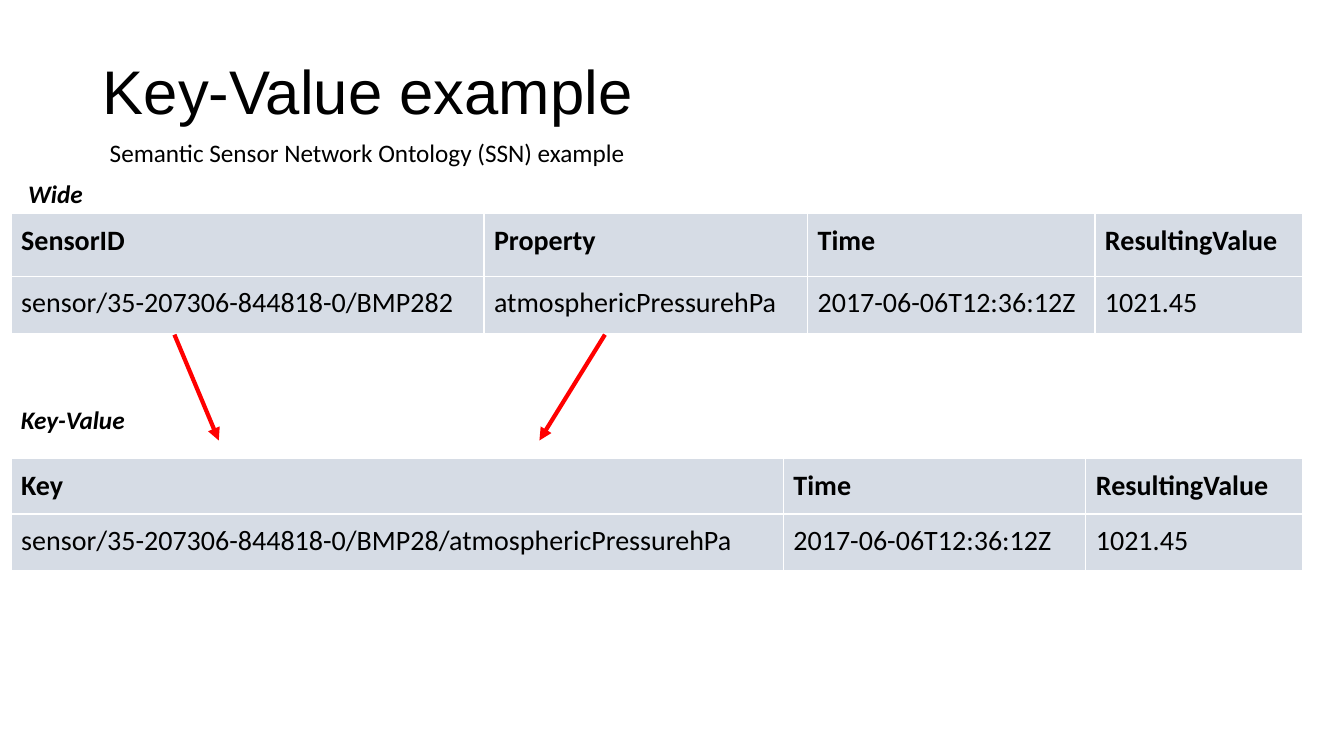
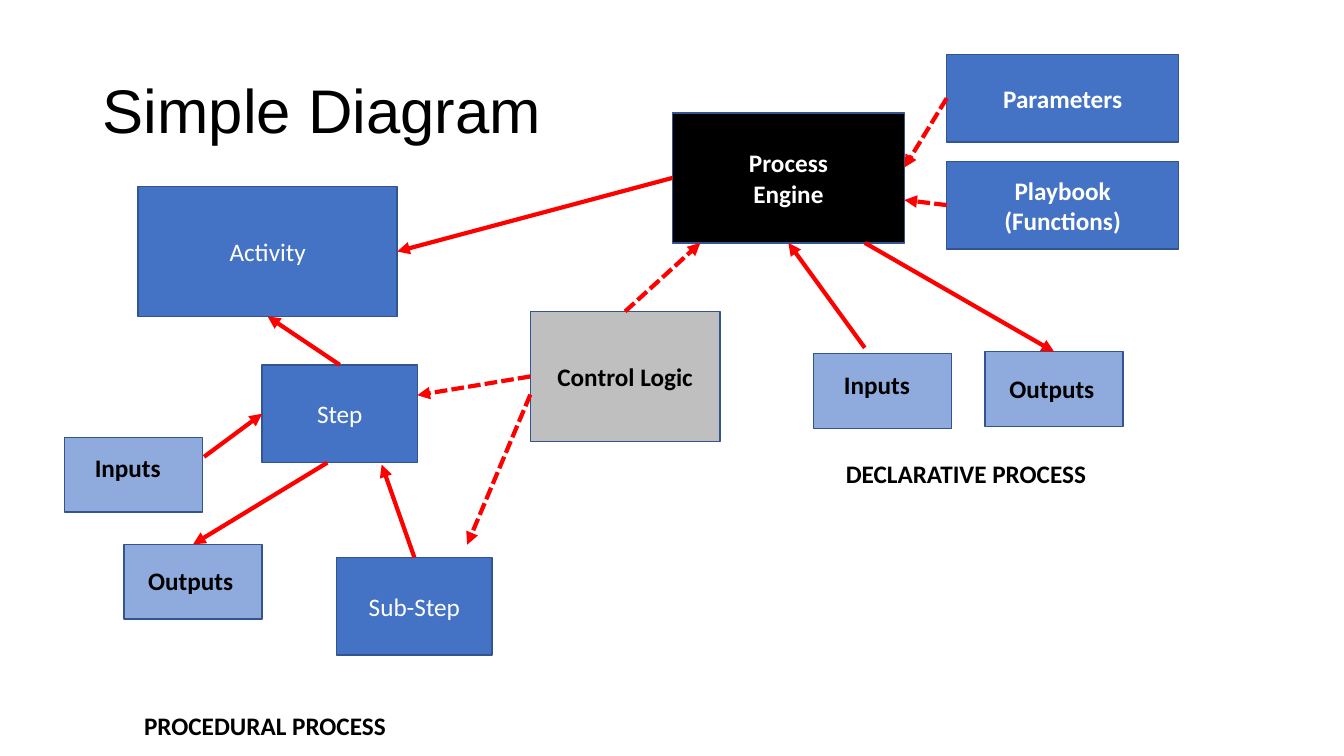
from lxml import etree
from pptx import Presentation
from pptx.dml.color import RGBColor
from pptx.enum.dml import MSO_LINE
from pptx.enum.shapes import MSO_CONNECTOR, MSO_SHAPE
from pptx.enum.text import MSO_ANCHOR, MSO_AUTO_SIZE, PP_ALIGN
from pptx.oxml.ns import qn
from pptx.util import Inches, Pt

RECT, STRAIGHT, DASH = MSO_SHAPE.RECTANGLE, MSO_CONNECTOR.STRAIGHT, MSO_LINE.SQUARE_DOT
TOP, MIDDLE = MSO_ANCHOR.TOP, MSO_ANCHOR.MIDDLE
LEFT, CENTER = PP_ALIGN.LEFT, PP_ALIGN.CENTER

# Shared style
BLACK = RGBColor(0x00, 0x00, 0x00)
WHITE = RGBColor(0xFF, 0xFF, 0xFF)
RED = RGBColor(0xFF, 0x00, 0x00)
BLUE = RGBColor(0x44, 0x72, 0xC4)
LIGHT_BLUE = RGBColor(0x8F, 0xAA, 0xDC)
OUTLINE = RGBColor(0x32, 0x54, 0x91)
GREY = RGBColor(0xBF, 0xBF, 0xBF)
CELL_FILL = RGBColor(0xD6, 0xDC, 0xE5)
TITLE_FONT, BODY_FONT = "Arial", "Calibri"
TITLE_LEFT, TITLE_TOP, TITLE_WIDTH = 0.92, 0.4, 11.5
LABEL_HEIGHT = 0.4
TITLE_ONLY = 5

# Slide 1: tables as (top, column widths, row heights, rows)
TABLE_LEFT = 0.11
TABLES = [
    (2.12, (4.69, 3.21, 2.85, 2.06), (0.62, 0.57), [
        ("SensorID", "Property", "Time", "ResultingValue"),
        ("sensor/35-207306-844818-0/BMP282", "atmosphericPressurehPa",
         "2017-06-06T12:36:12Z", "1021.45")]),
    (4.55, (7.66, 3, 2.15), (0.55, 0.56), [
        ("Key", "Time", "ResultingValue"),
        ("sensor/35-207306-844818-0/BMP28/atmosphericPressurehPa",
         "2017-06-06T12:36:12Z", "1021.45")]),
]
# Labels as (text, left, top, width, bold, italic)
TABLE_LABELS = [
    ("Wide", 0.18, 1.72, 0.75, True, True),
    ("Key-Value", 0.11, 3.96, 1.24, True, True),
    ("Semantic Sensor Network Ontology (SSN) example", 0.99, 1.31, 5.37, False, False),
]
KEY_ARROWS = [((1.73, 3.32), (2.17, 4.37)), ((6, 3.32), (5.35, 4.37))]

# Slide 2: box kinds as (width, height, fill, text colour, bold, text inset or None to centre)
KINDS = {
    "activity": (2.57, 1.29, BLUE, WHITE, False, None),
    "step": (1.54, 0.97, BLUE, WHITE, False, None),
    "logic": (1.88, 1.29, GREY, BLACK, True, None),
    "engine": (2.3, 1.29, BLACK, WHITE, True, None),
    "setting": (2.3, 0.87, BLUE, WHITE, True, None),
    "input": (1.37, 0.74, LIGHT_BLUE, BLACK, True, (0.3, 0.15)),
    "output": (1.37, 0.74, LIGHT_BLUE, BLACK, True, (0.24, 0.21)),
}
# Boxes as name: (kind, left, top, lines)
BOXES = {
    "activity": ("activity", 1.37, 1.85, ["Activity"]),
    "step": ("step", 2.6, 3.62, ["Step"]),
    "substep": ("step", 3.34, 5.53, ["Sub-Step"]),
    "logic": ("logic", 5.26, 3.09, ["Control Logic"]),
    "step in": ("input", 0.64, 4.34, ["Inputs"]),
    "step out": ("output", 1.23, 5.4, ["Outputs"]),
    "engine": ("engine", 6.67, 1.12, ["Process", "Engine"]),
    "parameters": ("setting", 9.39, 0.54, ["Parameters"]),
    "playbook": ("setting", 9.39, 1.6, ["Playbook", "(Functions)"]),
    "engine in": ("input", 8.07, 3.51, ["Inputs"]),
    "engine out": ("output", 9.77, 3.49, ["Outputs"]),
}
PROCESS_LABELS = [
    ("PROCEDURAL PROCESS", 1.33, 7, 2.62, True, False),
    ("DECLARATIVE PROCESS", 8.29, 4.5, 2.61, True, False),
]
# Arrow ends as shares of the box's width and height; these four are connection sites
N, W, S, E = (0.5, 0), (0, 0.5), (0.5, 1), (1, 0.5)
SITES = [N, W, S, E]
FLOWS = [  # from box, share, to box, share, dashed
    ("step", N, "activity", S, False),
    ("substep", N, "step", (0.77, 1.02), False),
    ("logic", W, "step", (1, 0.31), True),
    ("logic", (0, 0.64), "substep", (0.84, -0.13), True),
    ("step in", (1.01, 0.26), "step", W, False),
    ("step", (0.42, 1), "step out", N, False),
    ("engine", W, "activity", E, False),
    ("engine in", (0.37, -0.08), "engine", S, False),
    ("parameters", W, "engine", (1, 0.42), True),
    ("playbook", W, "engine", (1, 0.67), True),
    ("engine", (0.83, 1), "engine out", N, False),
    ("logic", N, "engine", (0.12, 1), True),
]


def add_run(p, text, size, color, bold=False, italic=False, font=BODY_FONT):
    r = p.add_run()
    r.text = text
    r.font.name, r.font.size = font, Pt(size)
    r.font.bold, r.font.italic = bold, italic
    r.font.color.rgb = color


def add_titled_slide(prs, title, height):
    slide = prs.slides.add_slide(prs.slide_layouts[TITLE_ONLY])
    sp = slide.shapes.title
    sp.left, sp.top = Inches(TITLE_LEFT), Inches(TITLE_TOP)
    sp.width, sp.height = Inches(TITLE_WIDTH), Inches(height)
    tf = sp.text_frame
    tf.vertical_anchor = MIDDLE
    p = tf.paragraphs[0]
    p.alignment, p.line_spacing = LEFT, 0.9
    add_run(p, title, 44, BLACK, font=TITLE_FONT)
    return slide


def add_label(slide, text, left, top, width, bold, italic):
    sp = slide.shapes.add_textbox(Inches(left), Inches(top), Inches(width), Inches(LABEL_HEIGHT))
    tf = sp.text_frame
    tf.word_wrap, tf.auto_size = False, MSO_AUTO_SIZE.SHAPE_TO_FIT_TEXT
    add_run(tf.paragraphs[0], text, 18, BLACK, bold, italic)


def add_arrow(slide, start, end, dashed=False):
    line = slide.shapes.add_connector(STRAIGHT, *(Inches(v) for v in (*start, *end)))
    line.line.color.rgb, line.line.width = RED, Pt(3)
    if dashed:
        line.line.dash_style = DASH
    etree.SubElement(line.line._get_or_add_ln(), qn("a:tailEnd"), type="triangle")
    etree.SubElement(line._element.spPr, qn("a:effectLst"))
    return line


def format_cell(cell, text, bold):
    tc_pr = cell._tc.get_or_add_tcPr()
    for side in ("lnL", "lnR", "lnT", "lnB"):
        ln = etree.SubElement(tc_pr, qn("a:" + side), w=str(Pt(1)))
        fill = etree.SubElement(ln, qn("a:solidFill"))
        etree.SubElement(fill, qn("a:srgbClr"), val=str(WHITE))
    cell.fill.solid()
    cell.fill.fore_color.rgb = CELL_FILL
    cell.margin_left = cell.margin_right = Inches(0.1)
    cell.margin_top = cell.margin_bottom = Inches(0.1)
    add_run(cell.text_frame.paragraphs[0], text, 20, BLACK, bold)


def add_data_table(slide, top, widths, heights, rows):
    table = slide.shapes.add_table(
        len(rows), len(widths), Inches(TABLE_LEFT), Inches(top),
        Inches(sum(widths)), Inches(sum(heights))).table
    table.horz_banding = False
    for column, width in zip(table.columns, widths):
        column.width = Inches(width)
    for i, (height, row) in enumerate(zip(heights, rows)):
        table.rows[i].height = Inches(height)
        for j, text in enumerate(row):
            format_cell(table.cell(i, j), text, bold=i == 0)


def add_box(slide, kind, left, top, lines):
    width, height, fill, color, bold, inset = KINDS[kind]
    sp = slide.shapes.add_shape(RECT, Inches(left), Inches(top), Inches(width), Inches(height))
    sp.shadow.inherit = False
    sp.fill.solid()
    sp.fill.fore_color.rgb = fill
    sp.line.color.rgb, sp.line.width = OUTLINE, Pt(1)
    tf = sp.text_frame
    tf.word_wrap = True
    tf.vertical_anchor = TOP if inset else MIDDLE
    if inset:
        tf.margin_left, tf.margin_top = Inches(inset[0]), Inches(inset[1])
        tf.margin_right = 0
    for i, text in enumerate(lines):
        p = tf.add_paragraph() if i else tf.paragraphs[0]
        p.alignment = LEFT if inset else CENTER
        add_run(p, text, 18, color, bold)
    return sp


def point_on(name, share):
    kind, left, top, _ = BOXES[name]
    width, height = KINDS[kind][:2]
    return left + share[0] * width, top + share[1] * height


def build_key_value(prs):
    slide = add_titled_slide(prs, "Key-Value example", 1.07)
    for table in TABLES:
        add_data_table(slide, *table)
    for label in TABLE_LABELS:
        add_label(slide, *label)
    for start, end in KEY_ARROWS:
        add_arrow(slide, start, end)


def build_diagram(prs):
    slide = add_titled_slide(prs, "Simple Diagram", 1.45)
    boxes = {name: add_box(slide, *box) for name, box in BOXES.items()}
    for label in PROCESS_LABELS:
        add_label(slide, *label)
    for source, out, target, into, dashed in FLOWS:
        line = add_arrow(slide, point_on(source, out), point_on(target, into), dashed)
        if out in SITES:
            line.begin_connect(boxes[source], SITES.index(out))
        if into in SITES:
            line.end_connect(boxes[target], SITES.index(into))


def main():
    prs = Presentation()
    prs.slide_width, prs.slide_height = Inches(13.33), Inches(7.5)
    build_key_value(prs)
    build_diagram(prs)
    prs.save("out.pptx")


if __name__ == "__main__":
    main()
